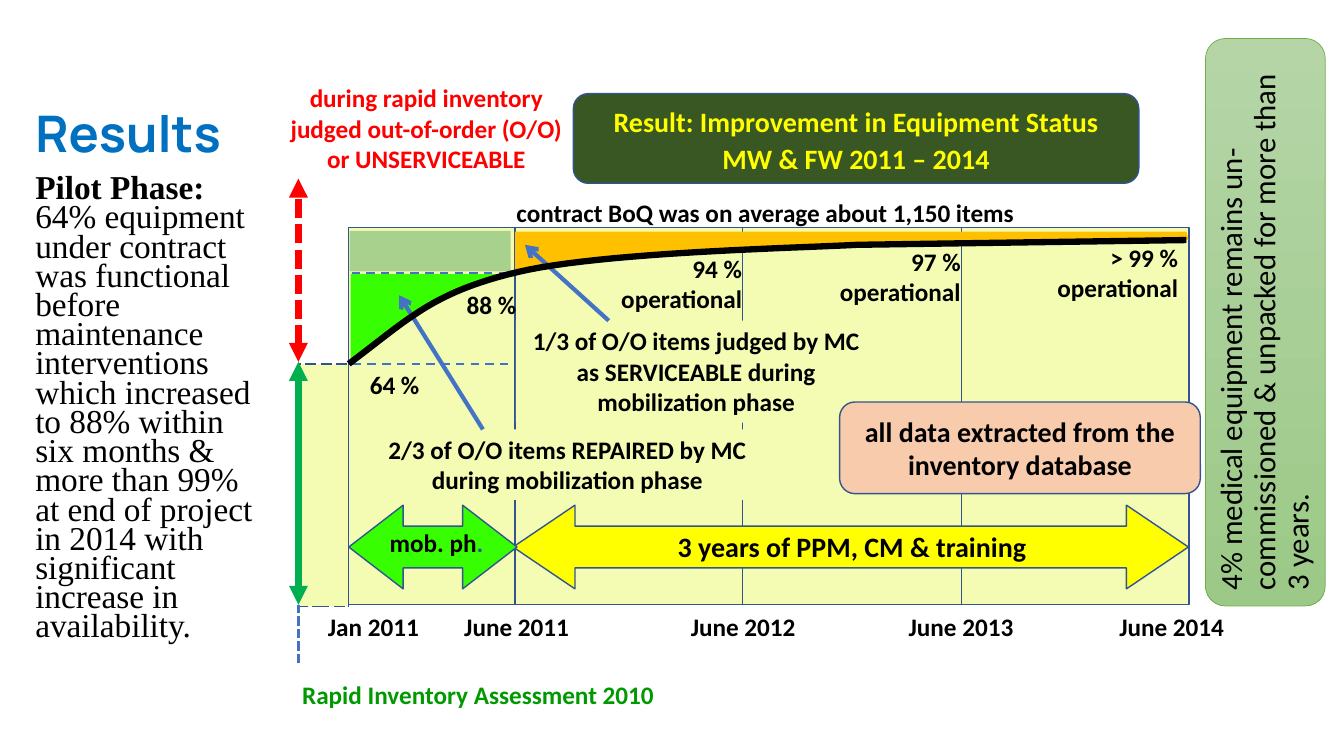
from itertools import pairwise

from lxml import etree
from pptx import Presentation
from pptx.dml.color import RGBColor
from pptx.enum.dml import MSO_LINE
from pptx.enum.shapes import MSO_CONNECTOR, MSO_SHAPE
from pptx.enum.text import MSO_ANCHOR, PP_ALIGN
from pptx.oxml.ns import qn
from pptx.util import Cm, Pt

RECT, ROUND, ARROW = MSO_SHAPE.RECTANGLE, MSO_SHAPE.ROUNDED_RECTANGLE, MSO_SHAPE.LEFT_RIGHT_ARROW
LEFT, MID, RIGHT = PP_ALIGN.LEFT, PP_ALIGN.CENTER, PP_ALIGN.RIGHT
TOP, MIDDLE = MSO_ANCHOR.TOP, MSO_ANCHOR.MIDDLE
DASH, SQUARE, LONG = MSO_LINE.DASH, MSO_LINE.SQUARE_DOT, MSO_LINE.LONG_DASH
STRAIGHT = MSO_CONNECTOR.STRAIGHT

BLACK, RED, LIME, YELLOW = "000000", "FF0000", "38FE02", "FFFF00"
CREAM, NAVY, BLUE = "F3FCB2", "325491", "4472C4"
EDGES = [8.79, 12.98, 18.72, 24.23, 29.97]
DATES = {
    "Jan 2011": 9.41,
    "June 2011": 13.02,
    "June 2012": 18.73,
    "June 2013": 24.22,
    "June 2014": 29.53,
}
ROOF, FLOOR, AXIS = 5.74, 15.24, 7.52


def rgb(color):
    return RGBColor.from_string(color)


def write(shape, text, size=18, color=BLACK, bold=True, align=MID, font="Calibri",
          gap=None, anchor=TOP, tail=None):
    frame = shape.text_frame
    frame.word_wrap = True
    frame.vertical_anchor = anchor
    for i, line in enumerate(text.split("\n")):
        para = frame.paragraphs[0] if i == 0 else frame.add_paragraph()
        para.alignment = align
        if gap:
            para.line_spacing = gap
        runs = [(line, color, bold)] + ([tail] if tail else [])
        for words, tint, heavy in runs:
            run = para.add_run()
            run.text = words
            run.font.name = font
            run.font.size = Pt(size)
            run.font.bold = heavy
            run.font.color.rgb = rgb(tint)


def label(slide, text, x, y, w, h, **style):
    box = slide.shapes.add_textbox(Cm(x), Cm(y), Cm(w), Cm(h))
    write(box, text, **style)


def paint(shape, fill=None, line=None, width=1, dash=None):
    shape.shadow.inherit = False
    if fill:
        shape.fill.solid()
        shape.fill.fore_color.rgb = rgb(fill)
    else:
        shape.fill.background()
    if line:
        shape.line.color.rgb = rgb(line)
        shape.line.width = Pt(width)
        if dash:
            shape.line.dash_style = dash
    else:
        shape.line.fill.background()


def block(slide, kind, x, y, w, h, fill, line=NAVY, dash=None):
    shape = slide.shapes.add_shape(kind, Cm(x), Cm(y), Cm(w), Cm(h))
    paint(shape, fill, line, dash=dash)
    return shape


def span(slide, x, y, w, h, fill, tip):
    shape = block(slide, ARROW, x, y, w, h, fill)
    shape.adjustments[0] = 0.5
    shape.adjustments[1] = tip


def link(slide, start, end, color, width, dash=None, head=None, tail=None):
    line = slide.shapes.add_connector(STRAIGHT, *map(Cm, start + end))
    line.line.color.rgb = rgb(color)
    line.line.width = Pt(width)
    if dash:
        line.line.dash_style = dash
    stroke = line.line._get_or_add_ln()
    for tag, kind in (("a:headEnd", head), ("a:tailEnd", tail)):
        if kind:
            etree.SubElement(stroke, qn(tag), type=kind)
    etree.SubElement(line._element.spPr, qn("a:effectLst"))


def trace(slide, points, close=True, **style):
    spots = [(Cm(x), Cm(y)) for x, y in points]
    pen = slide.shapes.build_freeform(*spots[0])
    pen.add_line_segments(spots[1:], close=close)
    paint(pen.convert_to_shape(), **style)


def bend(a, b, c, d, steps=24):
    points = []
    for i in range(steps + 1):
        t = i / steps
        u = 1 - t
        points.append(tuple(
            u**3 * p + 3 * u * u * t * q + 3 * u * t * t * r + t**3 * s
            for p, q, r, s in zip(a, b, c, d)))
    return points


def grid(slide):
    block(slide, RECT, AXIS, 9.17, 1.27, 6.12, CREAM, dash=LONG)
    for left, right in pairwise(EDGES):
        block(slide, RECT, left, ROOF, right - left, FLOOR - ROOF, CREAM)
    for date, mid in DATES.items():
        label(slide, date, mid - 1.69, 15.27, 3.38, 1.78)
    trace(slide, [(12.98, 6.86), (12.98, 5.84), (29.9, 5.84), (29.95, 6.05), (25.25, 6.12),
                  (21.49, 6.17), (18.34, 6.32), (16.1, 6.48), (14.86, 6.58), (13.41, 6.78)],
          fill="FFC000")


def scale(slide):
    link(slide, (AXIS, 9.12), (AXIS, 4.5), RED, 4.5, SQUARE, "triangle", "triangle")
    link(slide, (AXIS, FLOOR), (AXIS, 9.12), "00B050", 4.5, None, "triangle", "triangle")
    link(slide, (AXIS, 16.71), (AXIS, FLOOR), BLUE, 2.25, SQUARE)
    label(slide, "during rapid inventory\njudged out-of-order (O/O)\nor UNSERVICEABLE",
          6.4, 1.96, 8.69, 2.57, color=RED)
    label(slide, "Rapid Inventory Assessment 2010", 6.65, 16.99, 10.8, 1.02, color="009900")


def notes(slide):
    label(slide, "contract BoQ was on average about 1,150 items", 8.71, 4.85, 21.16, 1.02)
    label(slide, "94 %\noperational", 14.5, 6.25, 4.45, 1.78, align=RIGHT)
    label(slide, "97 %\noperational", 20.22, 6.07, 4.24, 1.78, align=RIGHT)
    label(slide, "> 99 %\noperational", 25.7, 5.97, 4.24, 1.78, align=RIGHT)
    span(slide, 12.93, 12.73, 17.02, 2.11, YELLOW, 0.74)
    label(slide, "3 years of PPM, CM & training", 16.18, 13.21, 10.59, 1.12, size=20)
    label(slide, "64 %", 8.99, 9.19, 1.91, 1.78)
    block(slide, RECT, 8.81, 5.82, 4.06, 1.02, "A9D18E", None)
    fixed = block(slide, RECT, 13, 8.08, 9.09, 2.57, CREAM, None)
    write(fixed, "1/3 of O/O items judged by MC as SERVICEABLE during mobilization phase")
    link(slide, (15.34, 8.08), (13.23, 6.17), BLUE, 3, tail="arrow")
    label(slide, "88 %", 11.43, 7.16, 1.91, 1.78)
    link(slide, (8.86, 6.87), (12.8, 6.87), BLUE, 1.5, DASH)
    data = block(slide, ROUND, 21.16, 10.13, 9.09, 2.31, "F8CBAD")
    write(data, "all data extracted from the inventory database", size=20, anchor=MIDDLE)
    span(slide, 8.79, 12.73, 4.24, 2.11, LIME, 0.65)
    mended = block(slide, RECT, 9.22, 10.82, 10.16, 1.78, CREAM, None)
    write(mended, "2/3 of O/O items REPAIRED by MC during mobilization phase")


def curve(slide):
    trace(slide, [(8.84, 9.14), (8.84, 6.91), (12.7, 6.91), (11.23, 7.39), (10.34, 8.05),
                  (9.78, 8.46)], fill=LIME)
    link(slide, (12.17, 10.82), (10.06, 7.44), BLUE, 3, tail="arrow")
    label(slide, "mob. ph", 8.98, 13.17, 4.04, 1.12, tail=(".", "2F5597", True))
    link(slide, (8.89, 9.17), (12.85, 9.17), BLUE, 1.5, DASH)
    rise = bend((8.79, 9.17), (10.31, 8.03), (10.9, 7.37), (13.03, 6.86))
    level = bend((13.03, 6.86), (15.16, 6.35), (20.19, 6.25), (21.59, 6.17))
    trace(slide, rise + level[1:] + [(29.9, 6.05)], close=False, line=BLACK, width=4.5)


def frame(slide):
    label(slide, "Results", 0.64, 2.62, 6, 2.54, size=36, color="0070C0",
          font="Manrope", align=LEFT, gap=0.9)
    head = block(slide, ROUND, 14.45, 2.36, 14.25, 2.26, "385723")
    write(head, "Result: Improvement in Equipment Status\nMW & FW 2011 – 2014",
          size=20, color=YELLOW, gap=1.1, anchor=MIDDLE)
    story = ("64% equipment under contract was functional before maintenance interventions "
             "which increased to 88% within six months & more than 99% at end of project "
             "in 2014 with significant increase in availability.")
    label(slide, "Pilot Phase: ", 0.64, 4.32, 6.35, 12.75, size=23.8, align=LEFT,
          font="Times New Roman", gap=0.73, tail=(story, BLACK, False))
    side = block(slide, ROUND, 30.38, 0.97, 3.02, 14.3, "B5D5A7", "70AD47")
    side.line.width = Pt(0.5)
    side.fill.gradient()
    side.fill.gradient_angle = 270
    for stop, color in zip(side.fill.gradient_stops, ("B5D5A7", "9CC987")):
        stop.color.rgb = rgb(color)
    write(side, "4% medical equipment remains un-commissioned & unpacked for more than 3 years.",
          size=22, bold=False, align=LEFT, gap=0.9, anchor=MIDDLE)
    side.text_frame._txBody.bodyPr.set("vert", "vert270")


def main():
    deck = Presentation()
    deck.slide_width, deck.slide_height = Cm(33.87), Cm(19.05)
    slide = deck.slides.add_slide(deck.slide_layouts[6])
    for part in (grid, scale, notes, curve, frame):
        part(slide)
    deck.save("out.pptx")


if __name__ == "__main__":
    main()
